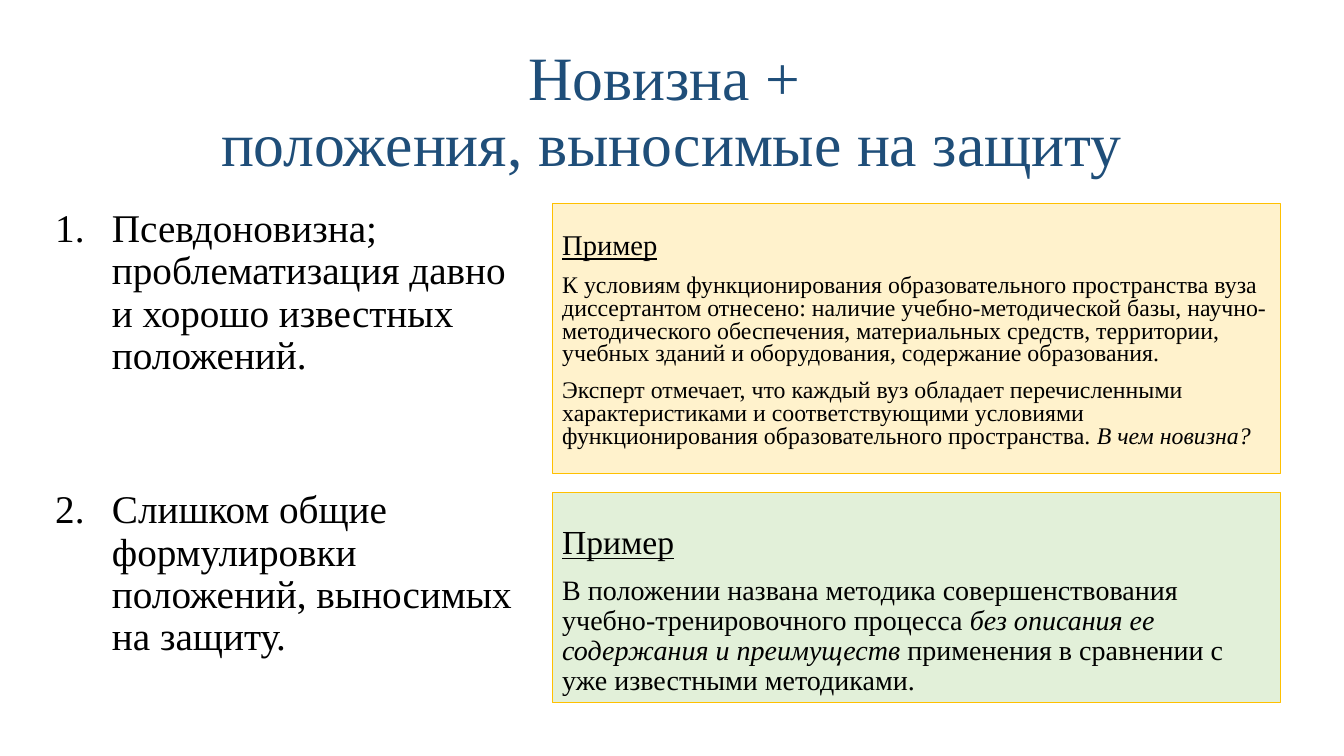
from lxml import etree
from pptx import Presentation
from pptx.dml.color import RGBColor
from pptx.enum.shapes import MSO_SHAPE
from pptx.enum.text import MSO_ANCHOR, PP_ALIGN
from pptx.oxml.ns import qn
from pptx.util import Pt

RECTANGLE = MSO_SHAPE.RECTANGLE
TOP, MIDDLE = MSO_ANCHOR.TOP, MSO_ANCHOR.MIDDLE
LEFT, CENTER = PP_ALIGN.LEFT, PP_ALIGN.CENTER

FONT = "Times New Roman"
BLACK, NAVY, GOLD = "000000", "1F4E79", "FFC000"
PLAIN, UNDERLINE, ITALIC = {}, {"underline": True}, {"italic": True}

TITLE = [("Новизна + ", PLAIN), ("\n", PLAIN), ("положения, выносимые на защиту", PLAIN)]
REMARKS = [
    "Псевдоновизна; проблематизация давно и хорошо известных положений.",
    "Слишком общие формулировки положений, выносимых на защиту.",
]
EXAMPLES = [
    {
        "top": 145.4, "height": 193, "fill": "FFF2CC", "inset": 21.5, "spacing": 0.8,
        "paragraphs": [
            (20.4, [("Пример", UNDERLINE)]),
            (17, [("К условиям функционирования образовательного пространства вуза "
                   "диссертантом отнесено: наличие учебно-методической базы, "
                   "научно-методического обеспечения, материальных средств, территории, "
                   "учебных зданий и оборудования, содержание образования.", PLAIN)]),
            (17, [("Эксперт отмечает, что каждый вуз обладает перечисленными "
                   "характеристиками и соответствующими условиями функционирования "
                   "образовательного пространства. ", PLAIN),
                  ("В чем новизна?", ITALIC)]),
        ],
    },
    {
        "top": 352, "height": 150, "fill": "E2F0D9", "inset": 23.5, "spacing": 0.9,
        "paragraphs": [
            (24, [("Пример", UNDERLINE)]),
            (20, [("В положении названа методика совершенствования "
                   "учебно-тренировочного процесса ", PLAIN),
                  ("без описания ее содержания и преимуществ", ITALIC),
                  (" применения в сравнении с уже известными методиками.", PLAIN)]),
        ],
    },
]

SLIDE_SIZE = (960, 540)
TITLE_BOX = (66, 28.8, 828, 104.4)
REMARK_LEFT, REMARK_TOP, REMARK_WIDTH, REMARK_HEIGHT = 32.4, 145.4, 345.6, 130
REMARK_STEP, REMARK_INDENT = 201, 40.5
EXAMPLE_LEFT, EXAMPLE_WIDTH = 394.5, 520


def color(value):
    return RGBColor.from_string(value)


def assign(target, values):
    for name, value in values.items():
        setattr(target, name, value)


def write(shape, paragraphs, font_color=BLACK, spacing=0.9, align=LEFT, anchor=TOP, inset=3.6):
    frame = shape.text_frame
    assign(frame, {"word_wrap": True, "vertical_anchor": anchor, "margin_top": Pt(inset)})
    for index, (size, runs) in enumerate(paragraphs):
        paragraph = frame.add_paragraph() if index else frame.paragraphs[0]
        assign(paragraph, {"alignment": align, "line_spacing": spacing,
                           "space_before": Pt(10 if index else 0)})
        for text, style in runs:
            if text == "\n":
                paragraph.add_line_break()
                continue
            run = paragraph.add_run()
            run.text = text
            assign(run.font, {"name": FONT, "size": Pt(size), **style})
            run.font.color.rgb = color(font_color)


def number(paragraph, start):
    properties = paragraph._p.get_or_add_pPr()
    properties.set("marL", str(Pt(REMARK_INDENT)))
    properties.set("indent", str(-Pt(REMARK_INDENT)))
    etree.SubElement(properties, qn("a:buFont"), typeface=FONT)
    etree.SubElement(properties, qn("a:buAutoNum"), type="arabicPeriod", startAt=str(start))


def add_text_box(slide, box):
    return slide.shapes.add_textbox(*map(Pt, box))


def add_example(slide, example):
    box = (EXAMPLE_LEFT, example["top"], EXAMPLE_WIDTH, example["height"])
    shape = slide.shapes.add_shape(RECTANGLE, *map(Pt, box))
    shape.shadow.inherit = False
    shape.fill.solid()
    shape.fill.fore_color.rgb = color(example["fill"])
    shape.line.color.rgb = color(GOLD)
    shape.line.width = Pt(0.5)
    write(shape, example["paragraphs"], spacing=example["spacing"], inset=example["inset"])


def main():
    presentation = Presentation()
    presentation.slide_width, presentation.slide_height = map(Pt, SLIDE_SIZE)
    slide = presentation.slides.add_slide(presentation.slide_layouts[6])

    write(add_text_box(slide, TITLE_BOX), [(44, TITLE)], NAVY, align=CENTER, anchor=MIDDLE)
    for index, remark in enumerate(REMARKS):
        top = REMARK_TOP + index * REMARK_STEP
        shape = add_text_box(slide, (REMARK_LEFT, top, REMARK_WIDTH, REMARK_HEIGHT))
        write(shape, [(28, [(remark, PLAIN)])])
        number(shape.text_frame.paragraphs[0], index + 1)
    for example in EXAMPLES:
        add_example(slide, example)

    presentation.save("out.pptx")


if __name__ == "__main__":
    main()
